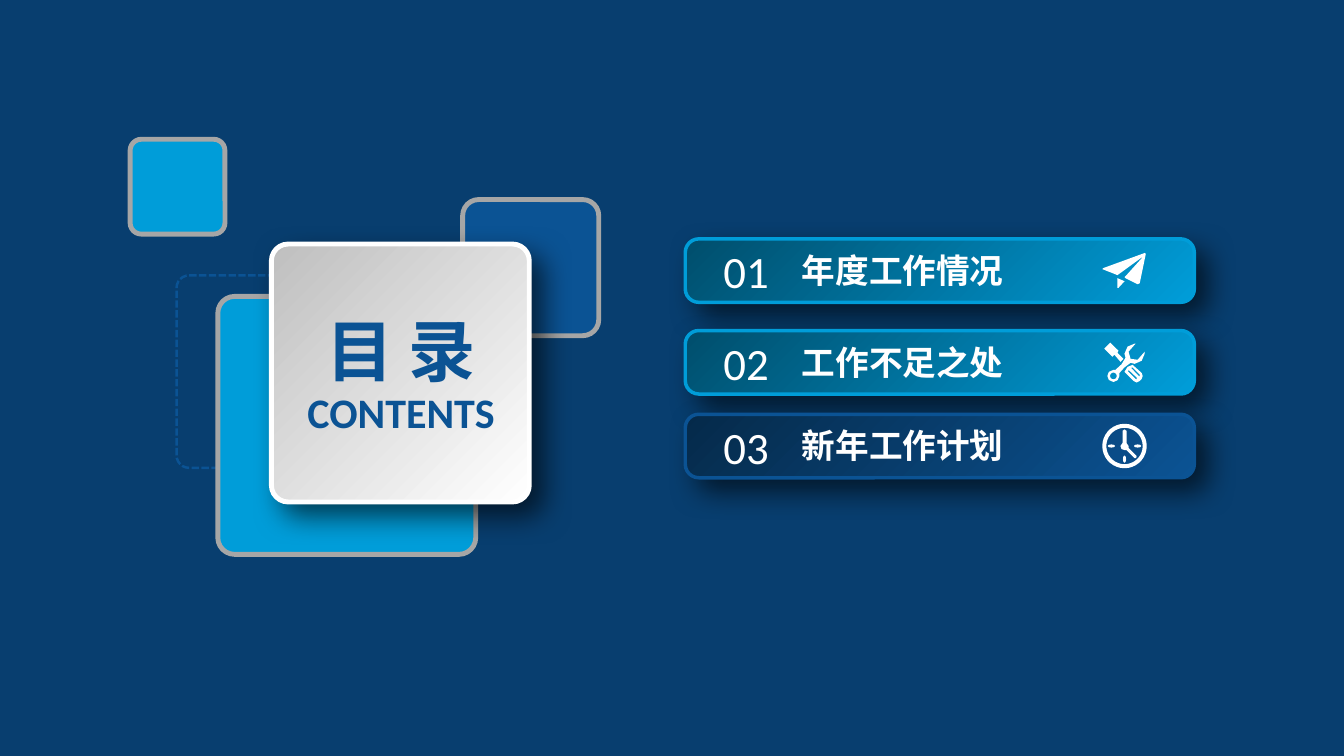
from math import cos, pi, sin

from lxml import etree
from pptx import Presentation
from pptx.dml.color import RGBColor
from pptx.enum.dml import MSO_LINE
from pptx.enum.shapes import MSO_SHAPE
from pptx.enum.text import MSO_AUTO_SIZE, PP_ALIGN
from pptx.oxml.ns import qn
from pptx.util import Cm, Pt

ROUNDED = MSO_SHAPE.ROUNDED_RECTANGLE
DASHED = MSO_LINE.SQUARE_DOT
GROW = MSO_AUTO_SIZE.SHAPE_TO_FIT_TEXT
LEFT, CENTER = PP_ALIGN.LEFT, PP_ALIGN.CENTER

LATIN, CHINESE = "Calibri", "Noto Sans CJK SC"
NAVY, BLUE, CYAN = "083E6F", "0B5394", "009DD9"
WHITE, GREY, SILVER = "FFFFFF", "A6A6A6", "BFBFBF"
TEAL, MIDNIGHT = "004E6C", "052A4A"

TITLE_FORMAT = {"name": LATIN, "size": Pt(48), "bold": True}
SUBTITLE_FORMAT = {"name": LATIN, "size": Pt(30), "bold": True}
NUMBER_FORMAT = {"name": LATIN, "size": Pt(32)}
LABEL_FORMAT = {"name": CHINESE, "size": Pt(24), "bold": True}

ICON_UNIT = Cm(1.12) / 44  # icons are drawn on a grid 44 units wide


def rgb(value):
    return RGBColor.from_string(value)


def ellipse(x, y, width, height, steps=36):
    """Points of an ellipse given by its centre and half axes."""
    angles = [2 * pi * step / steps for step in range(steps)]
    return [(x + width * cos(a), y + height * sin(a)) for a in angles]


# Icon outlines around their centre; an outline inside another is a hole
PLANE = [
    [(-7, 17), (-6, 17), (0, 10.5), (-7, 7.5)],
    [(20, -17.5), (-21, -2.5), (-22, -1.5), (-12, 2.5), (-7, 4.5), (19, -14.5),
     (1, 5.5), (0, 6.5), (1, 7.5), (13, 13.5), (15, 12.5), (21, -16.5)],
]
TOOLS = [
    # Screwdriver: blade, handle and two grooves
    [(-10, -7.5), (-4, -0.5), (-1, -3.5), (-7, -9.5), (-6, -11.5),
     (-14, -19.5), (-20, -13.5), (-12, -5.5)],
    [(8, 2.5), (3, 4.5), (0, 9.5), (9, 18.5), (12, 20), (15, 18.5),
     (17, 16.5), (18, 13.5), (17, 10.5)],
    [(6.5, 5.5), (8, 5), (15.5, 12.5), (14.5, 14)],
    [(3, 8.5), (4.5, 8), (12.5, 15.5), (11.5, 17)],
    # Spanner and its eye
    [(6, 0.5), (10, 1.5), (17, -1.5), (20, -8.5), (20, -10.5), (13, -2.5),
     (6, -3.5), (4, -10.5), (11, -18.5), (10, -18.5), (3, -15.5), (0, -8.5),
     (1, -4.5), (-3, 2), (-9, 7.5), (-11, 7.5), (-15.5, 9.5), (-17, 13.5),
     (-15.5, 17.5), (-11, 19.5), (-6.8, 17.7), (-5, 13.5), (-5, 10.5), (0, 5)],
    ellipse(-11, 13.5, 3.3, 3.3),
]
CLOCK = [
    ellipse(0, 0, 22, 22),
    ellipse(0, 0, 18, 18),
    # Hands, then the marks at nine, three and six
    [(-2, -15), (0, -16.5), (2, -15), (2, -3), (4, 0), (4, 2), (12, 10),
     (11.5, 12), (10, 12), (2, 4), (0, 4), (-3, 3), (-4, 0), (-2, -3)],
    ellipse(-13, 0, 3.5, 1.5),
    ellipse(13, 0, 3.5, 1.5),
    ellipse(0, 13, 1.5, 3.5),
]


def add_shadow(shape):
    effects = shape._element.spPr.find(qn("a:effectLst"))
    shadow = etree.SubElement(
        effects, qn("a:outerShdw"), blurRad=str(Pt(20)), dist=str(Pt(12)),
        dir="2700000", algn="tl", rotWithShape="0")
    color = etree.SubElement(shadow, qn("a:srgbClr"), val="000000")
    etree.SubElement(color, qn("a:alpha"), val="60000")


def add_tile(shapes, left, top, width, height, corner, fill, line, weight):
    """Rounded tile; a pair of colours gives a diagonal gradient and a shadow."""
    tile = shapes.add_shape(ROUNDED, Cm(left), Cm(top), Cm(width), Cm(height))
    tile.adjustments[0] = corner
    tile.shadow.inherit = False
    tile.line.color.rgb = rgb(line)
    tile.line.width = Pt(weight)
    if fill is None:
        tile.fill.background()
    elif isinstance(fill, str):
        tile.fill.solid()
        tile.fill.fore_color.rgb = rgb(fill)
    else:
        tile.fill.gradient()
        tile.fill.gradient_angle = 135
        for stop, color in zip(tile.fill.gradient_stops, fill):
            stop.color.rgb = rgb(color)
        add_shadow(tile)
    return tile


def add_text(shapes, left, top, width, height, text, style, color,
             align=LEFT, wrap=True):
    box = shapes.add_textbox(Cm(left), Cm(top), Cm(width), Cm(height))
    box.text_frame.word_wrap = wrap
    box.text_frame.auto_size = GROW
    para = box.text_frame.paragraphs[0]
    para.alignment = align
    span = para.add_run()
    span.text = text
    for name, value in style.items():
        setattr(span.font, name, value)
    span.font.color.rgb = rgb(color)
    etree.SubElement(span.font._element, qn("a:ea"), typeface=CHINESE)


def add_icon(shapes, x, y, outlines):
    """White icon centred on a point."""
    scaled = [[(px * ICON_UNIT, py * ICON_UNIT) for px, py in outline]
              for outline in outlines]
    builder = shapes.build_freeform(*scaled[0][0])
    for index, outline in enumerate(scaled):
        if index:
            builder.move_to(*outline[0])
        builder.add_line_segments(outline[1:], close=True)
    icon = builder.convert_to_shape(Cm(x), Cm(y))
    icon.shadow.inherit = False
    icon.fill.solid()
    icon.fill.fore_color.rgb = rgb(WHITE)
    icon.line.fill.background()


def add_title_tiles(page, left, top):
    """Overlapping squares with the title card in front."""
    squares = [  # x, y, side, corner, fill, line, weight
        (1.17, 3.43, 4.85, 0.065, None, BLUE, 1.75),
        (2.21, 3.96, 6.5, 0.065, CYAN, GREY, 3.5),
        (0, 0, 2.39, 0.118, CYAN, GREY, 3.5),
        (8.38, 1.52, 3.43, 0.118, BLUE, GREY, 3.5),
        (3.56, 2.64, 6.5, 0.065, (WHITE, SILVER), WHITE, 3.5),
    ]
    for x, y, side, corner, fill, line, weight in squares:
        tile = add_tile(page.shapes, left + x, top + y, side, side,
                        corner, fill, line, weight)
        if fill is None:
            tile.line.dash_style = DASHED
    add_text(page.shapes, left + 4.22, top + 4.17, 5.21, 2.31,
             "目 录", TITLE_FORMAT, BLUE, CENTER)
    add_text(page.shapes, left + 4.01, top + 6.1, 5.64, 1.55,
             "CONTENTS", SUBTITLE_FORMAT, BLUE, CENTER)


def add_chapter_bar(page, left, top, width, height, number, label, icon, colors):
    """Bar with chapter number, name and icon."""
    shapes = page.shapes.add_group_shape().shapes
    add_tile(shapes, left, top, width, height, 0.214, colors, colors[0], 2.5)
    add_text(shapes, left + 2.69, top + 0.15, 6.88, 1.27,
             label, LABEL_FORMAT, WHITE)
    add_text(shapes, left + 0.71, top, 1.68, 1.63,
             f"{number:02}", NUMBER_FORMAT, WHITE, wrap=False)
    add_icon(shapes, left + width - 1.76, top + height / 2, icon)


def main():
    deck = Presentation()
    deck.slide_width, deck.slide_height = Cm(33.87), Cm(19.05)
    page = deck.slides.add_slide(deck.slide_layouts[6])
    page.background.fill.solid()
    page.background.fill.fore_color.rgb = rgb(NAVY)

    add_title_tiles(page, 3.28, 3.51)

    chapters = [
        (6.02, "年度工作情况", PLANE, (CYAN, TEAL)),
        (8.33, "工作不足之处", TOOLS, (CYAN, TEAL)),
        (10.44, "新年工作计划", CLOCK, (BLUE, MIDNIGHT)),
    ]
    for number, (top, label, icon, colors) in enumerate(chapters, 1):
        add_chapter_bar(page, 17.27, top, 12.83, 1.6,
                        number, label, icon, colors)

    deck.save("out.pptx")


if __name__ == "__main__":
    main()
